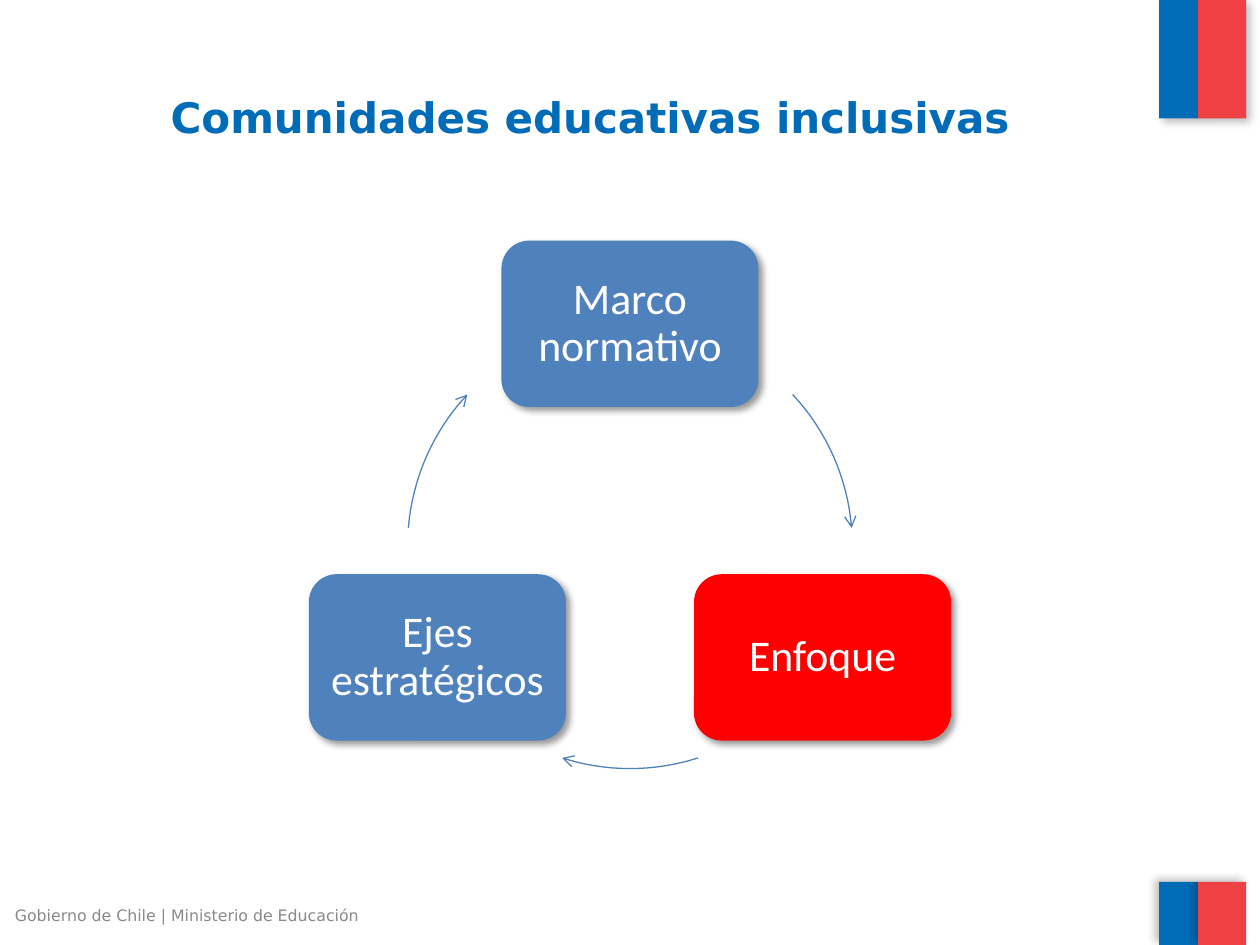
from math import cos, radians, sin

from lxml import etree
from pptx import Presentation
from pptx.dml.color import RGBColor
from pptx.enum.shapes import MSO_SHAPE
from pptx.enum.text import MSO_ANCHOR, PP_ALIGN
from pptx.oxml.ns import qn
from pptx.util import Inches, Pt

RECTANGLE = MSO_SHAPE.RECTANGLE
ROUNDED = MSO_SHAPE.ROUNDED_RECTANGLE
LEFT, CENTER = PP_ALIGN.LEFT, PP_ALIGN.CENTER
MIDDLE = MSO_ANCHOR.MIDDLE

COLUMNS, ROWS = 100, 75
SLIDE_WIDTH, SLIDE_HEIGHT = Inches(10), Inches(7.5)
BLUE, RED = "006CB7", "EF4144"
STEP_BLUE, STEP_RED = "4F81BD", "FF0000"
WHITE, GRAY = "FFFFFF", "898989"
HEADING_FONT, STEP_FONT = "DejaVu Sans", "Calibri"

CYCLE_CENTER = (50, 43.35)
CYCLE_RADIUS = 17.65
STEP_SIZE = (20.4, 13.2)
STEPS = [
    ("Marco normativo", STEP_BLUE, -90),
    ("Enfoque", STEP_RED, 30),
    ("Ejes estratégicos", STEP_BLUE, 150),
]
ARCS = [(-43, -4.7), (72.2, 107.8), (184.7, 223)]
ARC_SEGMENTS = 16


def color(hex_value):
    return RGBColor.from_string(hex_value)


def col(count):
    return round(SLIDE_WIDTH * count / COLUMNS)


def row(count):
    return round(SLIDE_HEIGHT * count / ROWS)


def area(left, top, width, height):
    return col(left), row(top), col(width), row(height)


def on_cycle(angle):
    center_col, center_row = CYCLE_CENTER
    turn = radians(angle)
    return center_col + CYCLE_RADIUS * cos(turn), center_row + CYCLE_RADIUS * sin(turn)


def write(shape, text, *, size, font, ink, bold=False, align=CENTER, spacing=1.0, inset=0.1):
    frame = shape.text_frame
    frame.word_wrap = True
    frame.vertical_anchor = MIDDLE
    frame.margin_left = frame.margin_right = Inches(inset)
    paragraph = frame.paragraphs[0]
    paragraph.alignment = align
    paragraph.line_spacing = spacing
    run = paragraph.add_run()
    run.text = text
    run.font.name = font
    run.font.size = Pt(size)
    run.font.bold = bold
    run.font.color.rgb = color(ink)


def cast_shadow(shape, opacity, blur, direction):
    shape.shadow.inherit = False
    effects = shape._element.spPr.find(qn("a:effectLst"))
    shadow = etree.SubElement(
        effects, qn("a:outerShdw"), blurRad=str(Pt(blur)), dist=str(Pt(3)),
        dir=str(direction * 60000), algn="tl", rotWithShape="0",
    )
    tint = etree.SubElement(shadow, qn("a:srgbClr"), val="000000")
    etree.SubElement(tint, qn("a:alpha"), val=str(opacity * 1000))


def add_block(slide, kind, place, fill, opacity, blur, direction):
    block = slide.shapes.add_shape(kind, *area(*place))
    block.fill.solid()
    block.fill.fore_color.rgb = color(fill)
    block.line.fill.background()
    cast_shadow(block, opacity, blur, direction)
    return block


def add_flag(slide, top, height, direction):
    for left, width, fill in [(92, 3.1, BLUE), (95.1, 3.8, RED)]:
        add_block(slide, RECTANGLE, (left, top, width, height), fill, 25, 5, direction)


def add_step(slide, text, fill, angle):
    center_col, center_row = on_cycle(angle)
    width, height = STEP_SIZE
    place = (center_col - width / 2, center_row - height / 2, width, height)
    step = add_block(slide, ROUNDED, place, fill, 40, 4, 45)
    write(step, text, size=25, font=STEP_FONT, ink=WHITE, spacing=0.9, inset=0.05)


def add_arc(slide, start, end):
    angles = [start + (end - start) * i / ARC_SEGMENTS for i in range(ARC_SEGMENTS + 1)]
    points = [(col(x), row(y)) for x, y in map(on_cycle, angles)]
    builder = slide.shapes.build_freeform(*points[0])
    builder.add_line_segments(points[1:], close=False)
    arc = builder.convert_to_shape()
    arc.fill.background()
    arc.line.color.rgb = color(STEP_BLUE)
    arc.line.width = Pt(0.75)
    arc.shadow.inherit = False
    outline = arc._element.spPr.find(qn("a:ln"))
    etree.SubElement(outline, qn("a:tailEnd"), type="arrow")


def add_title(slide, text):
    title = slide.shapes.title
    title.left, title.top, title.width, title.height = area(3.1, 3, 87.5, 12.5)
    write(title, text, size=24, font=HEADING_FONT, ink=BLUE, bold=True)


def add_footer(slide, text):
    footer = slide.shapes.add_textbox(*area(0.2, 71.3, 31.7, 2.7))
    write(footer, text, size=9, font=HEADING_FONT, ink=GRAY, align=LEFT)


def main():
    deck = Presentation()
    deck.slide_width, deck.slide_height = SLIDE_WIDTH, SLIDE_HEIGHT
    slide = deck.slides.add_slide(deck.slide_layouts[5])
    add_footer(slide, "Gobierno de Chile | Ministerio de Educación")
    add_flag(slide, 0, 9.4, 45)
    add_flag(slide, 70, 5, 215)
    add_title(slide, "Comunidades educativas inclusivas")
    for step, arc in zip(STEPS, ARCS):
        add_step(slide, *step)
        add_arc(slide, *arc)
    deck.save("out.pptx")


if __name__ == "__main__":
    main()
